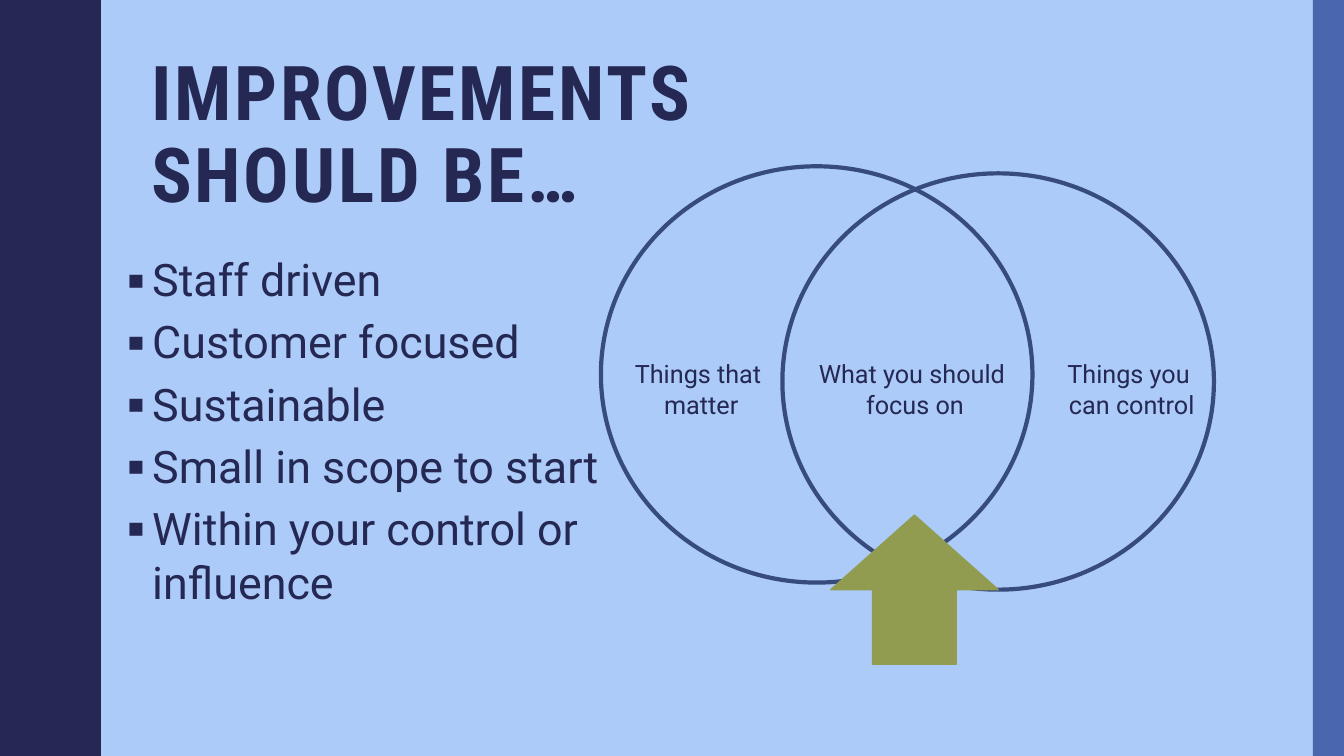
from lxml import etree
from pptx import Presentation
from pptx import util as u
from pptx.dml.color import RGBColor
from pptx.enum import shapes, text
from pptx.oxml import ns

NAVY = RGBColor(0x24, 0x28, 0x52)
BLUE = RGBColor(0x4A, 0x66, 0xAC)
SKY = RGBColor(0xAC, 0xCB, 0xF9)
RING = RGBColor(0x37, 0x4B, 0x7F)
OLIVE = RGBColor(0x91, 0x9C, 0x50)

WIDTH, HEIGHT = 13.33, 7.5
WAVE_PERIOD = 1.5
# First half of one wave as (x, y); the other half mirrors it.
HALF_WAVE = [(0.78, 0), (0.78, 0.07), (0.79, 0.14), (0.8, 0.2), (0.81, 0.25),
             (0.83, 0.29), (0.85, 0.33), (0.87, 0.38), (0.89, 0.42), (0.91, 0.46),
             (0.93, 0.5), (0.95, 0.55), (0.96, 0.61), (0.97, 0.68), (0.97, 0.75)]

TITLE_FONT = {"name": "Roboto Condensed", "size": u.Pt(54), "bold": True}
BODY_FONT = {"name": "Roboto", "size": u.Pt(32)}
LABEL_FONT = {"name": "Roboto", "size": u.Pt(18)}
TITLE_PARAGRAPH = {"alignment": text.PP_ALIGN.LEFT, "line_spacing": 0.9}
BODY_PARAGRAPH = {"alignment": text.PP_ALIGN.LEFT, "line_spacing": 1.0,
                  "space_before": u.Pt(6)}
LABEL_PARAGRAPH = {"alignment": text.PP_ALIGN.CENTER}
FRAME = {"word_wrap": True, "auto_size": text.MSO_AUTO_SIZE.NONE,
         "vertical_anchor": text.MSO_ANCHOR.TOP}

BULLETS = ["Staff driven", "Customer focused", "Sustainable",
           "Small in scope to start", "Within your control or influence"]
CIRCLES = [(5.96, 1.65), (7.76, 1.72)]
LABELS = [(5.9, ["Things that ", "matter"]),
          (8.02, ["What you should ", "focus on"]),
          (10.17, ["Things you ", "can control"])]


def apply(target, values):
    for name, value in values.items():
        setattr(target, name, value)


def inches(*lengths):
    return [u.Inches(length) for length in lengths]


class SlideBuilder:
    def __init__(self, presentation):
        self.slide = presentation.slides.add_slide(presentation.slide_layouts[1])
        fill = self.slide.background.fill
        fill.solid()
        fill.fore_color.rgb = SKY

    def paint(self, shape, fill=None, line=None, weight=1):
        shape.shadow.inherit = False
        if fill is None:
            shape.fill.background()
        else:
            shape.fill.solid()
            shape.fill.fore_color.rgb = fill
        if line is None:
            shape.line.fill.background()
        else:
            shape.line.color.rgb = line
            shape.line.width = u.Pt(weight)

    def preset(self, kind, box, **colours):
        self.paint(self.slide.shapes.add_shape(kind, *inches(*box)), **colours)

    def wavy_edge(self):
        wave = HALF_WAVE + [(x, WAVE_PERIOD - y) for x, y in HALF_WAVE[-2:0:-1]]
        count = round(HEIGHT / WAVE_PERIOD)
        points = [(x, y + index * WAVE_PERIOD) for index in range(count) for x, y in wave]
        points += [(HALF_WAVE[0][0], HEIGHT), (0, HEIGHT)]
        builder = self.slide.shapes.build_freeform(0, 0, scale=u.Inches(1))
        builder.add_line_segments(points, close=True)
        self.paint(builder.convert_to_shape(), fill=NAVY)

    def set_text(self, shape, lines, font, paragraph_format):
        frame = shape.text_frame
        apply(frame, FRAME)
        frame.text = "\n".join(lines)
        for paragraph in frame.paragraphs:
            apply(paragraph, paragraph_format)
            for run in paragraph.runs:
                apply(run.font, font)
                run.font.color.rgb = NAVY
        return frame.paragraphs

    def placeholder(self, index, box, *content):
        shape = self.slide.placeholders[index]
        apply(shape, dict(zip(("left", "top", "width", "height"), inches(*box))))
        return self.set_text(shape, *content)

    def title(self, words, box):
        for paragraph in self.placeholder(0, box, [words], TITLE_FONT, TITLE_PARAGRAPH):
            for run in paragraph.runs:
                run._r.get_or_add_rPr().set("spc", "200")

    def bullet_list(self, items, box):
        for paragraph in self.placeholder(1, box, items, BODY_FONT, BODY_PARAGRAPH):
            properties = paragraph._p.get_or_add_pPr()
            indent = u.Inches(0.25)
            properties.set("marL", str(indent))
            properties.set("indent", str(-indent))
            colour = etree.SubElement(properties, ns.qn("a:buClr"))
            etree.SubElement(colour, ns.qn("a:srgbClr"), val=str(NAVY))
            etree.SubElement(properties, ns.qn("a:buFont"), typeface="Roboto")
            etree.SubElement(properties, ns.qn("a:buChar"), char="▪")

    def label(self, lines, box):
        shape = self.slide.shapes.add_textbox(*inches(*box))
        self.set_text(shape, lines, LABEL_FONT, LABEL_PARAGRAPH)


def main():
    presentation = Presentation()
    presentation.slide_width, presentation.slide_height = inches(WIDTH, HEIGHT)
    builder = SlideBuilder(presentation)
    builder.wavy_edge()
    builder.preset(shapes.MSO_SHAPE.RECTANGLE, (13.02, 0, 0.31, HEIGHT), fill=BLUE)
    builder.title("IMPROVEMENTS SHOULD BE…", (1.4, 0.5, 8.12, 1.45))
    builder.bullet_list(BULLETS, (1.16, 2.45, 5.61, 3.71))
    for left, lines in LABELS:
        builder.label(lines, (left, 3.51, 2.11, 0.71))
    for left, top in CIRCLES:
        builder.preset(shapes.MSO_SHAPE.OVAL, (left, top, 4.28, 4.13), line=RING, weight=3)
    builder.preset(shapes.MSO_SHAPE.UP_ARROW, (8.24, 5.11, 1.66, 1.48),
                   fill=OLIVE, line=OLIVE)
    presentation.save("out.pptx")


if __name__ == "__main__":
    main()
